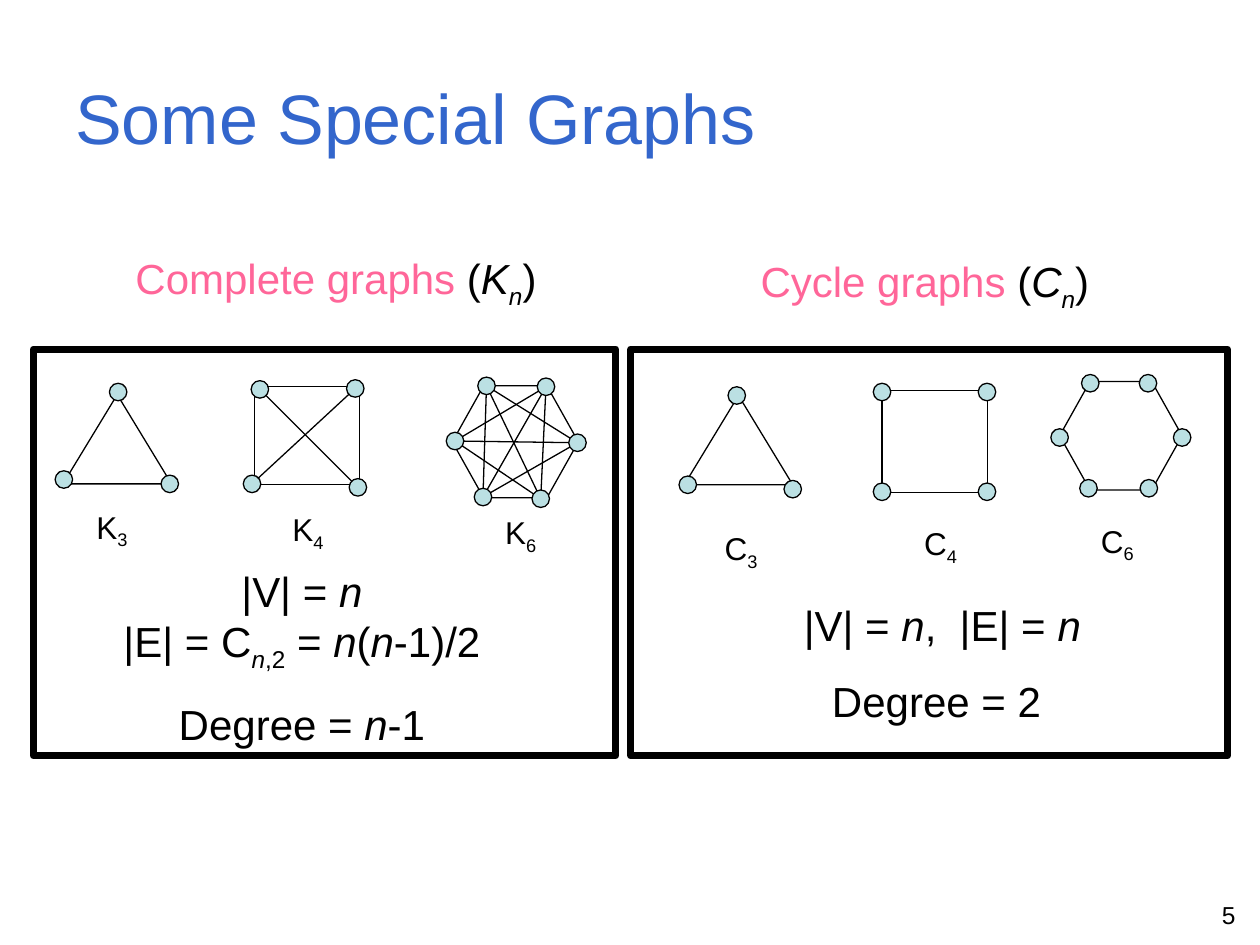
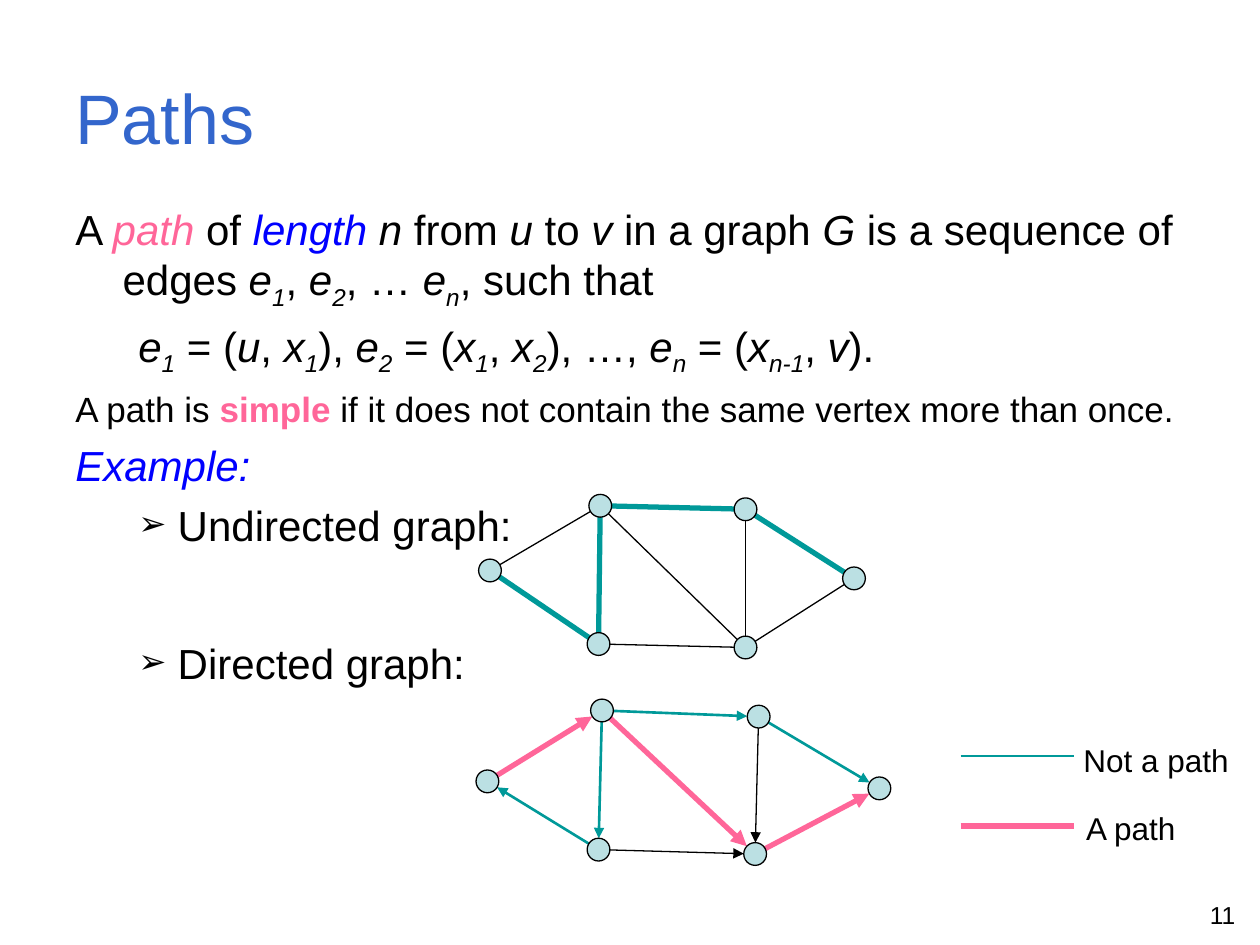
from dataclasses import dataclass
from itertools import combinations
from math import hypot
from typing import NamedTuple

from lxml.etree import SubElement
from pptx import Presentation
from pptx.dml.color import RGBColor
from pptx.enum.shapes import MSO_CONNECTOR, MSO_SHAPE
from pptx.enum.text import MSO_ANCHOR, PP_ALIGN
from pptx.oxml.ns import qn
from pptx.slide import Slide
from pptx.util import Pt

COLORS = {
    "black": "000000",
    "title": "3366CC",
    "pink": "FF6699",
    "blue": "0000FF",
    "teal": "009999",
    "node": "BBE0E3",
}
FONT = "Arial"
THIN, MEDIUM, THICK = 0.75, 1.5, 3

Point = tuple[float, float]
Box = tuple[float, float, float, float]


class Run(NamedTuple):
    text: str
    italic: bool = False
    subscript: bool = False
    color: str = "black"
    bold: bool = False


class Line(NamedTuple):
    runs: list[Run]
    size: float = 24
    align: PP_ALIGN = PP_ALIGN.LEFT
    margin: float = 0
    indent: float = 0
    level: int = 0
    bullet: str = ""
    spacing: float = 1
    before: float = 0


class Edge(NamedTuple):
    start: str
    end: str
    color: str = "black"
    width: float = THIN


@dataclass
class SpecialGraph:
    family: str
    order: str
    label_box: Box
    outline: MSO_SHAPE
    outline_box: Box
    nodes: list[Point]
    inset: float | None = None
    complete: bool = False


@dataclass
class VertexGraph:
    nodes: dict[str, Point]
    edges: list[Edge]
    directed: bool = False


def variable(text: str) -> Run:
    return Run(text, italic=True)


def indexed(name: str, index: str) -> list[Run]:
    return [variable(name), Run(index, italic=True, subscript=True)]


def hanging(runs: list[Run], size: float = 24) -> Line:
    return Line(runs, size, margin=27, indent=-27, before=5.5)


def nested(runs: list[Run], bullet: str = "") -> Line:
    return Line(runs, margin=58.5, indent=-22.5, level=1, bullet=bullet, before=5.5)


def centered(runs: list[Run], spacing: float = 1) -> Line:
    return Line(runs, align=PP_ALIGN.CENTER, spacing=spacing)


def rgb(color: str) -> RGBColor:
    return RGBColor.from_string(COLORS[color])


def add_text(slide: Slide, box: Box, lines: list[Line], wrap: bool = True,
             anchor: MSO_ANCHOR = MSO_ANCHOR.TOP) -> None:
    frame = slide.shapes.add_textbox(*map(Pt, box)).text_frame
    frame.word_wrap = wrap
    frame.vertical_anchor = anchor
    for number, line in enumerate(lines):
        paragraph = frame.add_paragraph() if number else frame.paragraphs[0]
        paragraph.alignment = line.align
        paragraph.level = line.level
        paragraph.line_spacing = line.spacing
        paragraph.space_before = Pt(line.before if number else 0)
        properties = paragraph._p.get_or_add_pPr()
        properties.set("marL", str(Pt(line.margin)))
        properties.set("indent", str(Pt(line.indent)))
        if line.bullet:
            SubElement(properties, qn("a:buSzPct"), val="80000")
            SubElement(properties, qn("a:buFont"), typeface=FONT)
            SubElement(properties, qn("a:buChar"), char=line.bullet)
        for item in line.runs:
            run = paragraph.add_run()
            run.text = item.text
            run.font.name = FONT
            run.font.size = Pt(line.size)
            run.font.italic = item.italic
            run.font.bold = item.bold
            run.font.color.rgb = rgb(item.color)
            if item.subscript:
                run.font._element.set("baseline", "-25000")


def add_outline(slide: Slide, kind: MSO_SHAPE, box: Box, width: float = THIN,
                fill: str | None = None, inset: float | None = None) -> None:
    shape = slide.shapes.add_shape(kind, *map(Pt, box))
    shape.shadow.inherit = False
    if fill:
        shape.fill.solid()
        shape.fill.fore_color.rgb = rgb(fill)
    else:
        shape.fill.background()
    shape.line.color.rgb = rgb("black")
    shape.line.width = Pt(width)
    if inset is not None:
        shape.adjustments[0] = inset


def add_line(slide: Slide, start: Point, end: Point, color: str = "black",
             width: float = THIN, arrow: bool = False) -> None:
    connector = slide.shapes.add_connector(
        MSO_CONNECTOR.STRAIGHT, *map(Pt, (*start, *end)))
    connector.line.color.rgb = rgb(color)
    connector.line.width = Pt(width)
    if arrow:
        SubElement(connector.line._get_or_add_ln(), qn("a:tailEnd"), type="triangle")
    SubElement(connector._element.spPr, qn("a:effectLst"))


def add_node(slide: Slide, center: Point, diameter: float) -> None:
    left, top = (value - diameter / 2 for value in center)
    add_outline(slide, MSO_SHAPE.OVAL, (left, top, diameter, diameter), fill="node")


def toward(start: Point, end: Point, gap: float) -> Point:
    share = 1 - gap / hypot(end[0] - start[0], end[1] - start[1])
    return tuple(a + (b - a) * share for a, b in zip(start, end))


def draw_special_graph(slide: Slide, graph: SpecialGraph) -> None:
    label = [Run(graph.family), Run(graph.order, subscript=True)]
    add_text(slide, graph.label_box, [Line(label, size=18)])
    add_outline(slide, graph.outline, graph.outline_box, inset=graph.inset)
    if graph.complete:
        count = len(graph.nodes)
        for first, second in combinations(range(count), 2):
            if second - first not in (1, count - 1):
                add_line(slide, graph.nodes[first], graph.nodes[second])
    for center in graph.nodes:
        add_node(slide, center, 10)


def draw_vertex_graph(slide: Slide, graph: VertexGraph) -> None:
    diameter = 13
    for edge in graph.edges:
        start, end = graph.nodes[edge.start], graph.nodes[edge.end]
        if graph.directed:
            end = toward(start, end, diameter / 2)
        add_line(slide, start, end, edge.color, edge.width, graph.directed)
    for center in graph.nodes.values():
        add_node(slide, center, diameter)


def add_slide(presentation: Presentation, title: str, number: str) -> Slide:
    slide = presentation.slides.add_slide(presentation.slide_layouts[6])
    add_text(slide, (545, 510.5, 168, 22),
             [Line([Run(number)], size=14, align=PP_ALIGN.RIGHT)])
    add_text(slide, (36, 21.5, 648, 90), [Line([Run(title, color="title")], size=40)],
             anchor=MSO_ANCHOR.MIDDLE)
    return slide


TRIANGLE, SQUARE, HEXAGON = (
    MSO_SHAPE.ISOSCELES_TRIANGLE, MSO_SHAPE.RECTANGLE, MSO_SHAPE.HEXAGON)

SPECIAL_GRAPHS = [
    SpecialGraph("K", "3", (48, 286.5, 34, 29), TRIANGLE, (36, 225.5, 62, 51),
                 [(67.5, 224), (97, 276.5), (36.5, 274)], complete=True),
    SpecialGraph("K", "4", (160, 288, 34, 29), SQUARE, (145.5, 221, 60, 56),
                 [(148.5, 222.5), (203, 222), (204.5, 278.5), (144, 276.5)],
                 complete=True),
    SpecialGraph("K", "6", (281.5, 289.5, 34, 29), HEXAGON, (258.5, 220.5, 72, 64),
                 [(278, 220.5), (312, 221), (330, 253), (309, 285), (276, 284),
                  (260, 252)], inset=0.28, complete=True),
    SpecialGraph("C", "3", (407, 299, 50, 29), TRIANGLE, (391, 226, 62, 51),
                 [(421, 226), (453, 279.5), (393, 277)]),
    SpecialGraph("C", "4", (521, 296, 50, 29), SQUARE, (504, 223, 60.5, 58.5),
                 [(504, 224), (564, 224), (564, 281), (504, 281)]),
    SpecialGraph("C", "6", (622, 294.5, 50, 29), HEXAGON, (605.5, 218, 70, 62),
                 [(623, 219), (656, 219), (675.5, 250), (656.5, 279), (622, 279),
                  (605.5, 250)], inset=0.28),
]

UNDIRECTED = VertexGraph(
    {"top left": (343, 289), "top right": (426, 291), "left": (280, 326),
     "bottom left": (342, 368), "bottom right": (426, 370), "right": (488, 330.5)},
    [Edge("top left", "left"),
     Edge("right", "bottom right"),
     Edge("top left", "bottom right"),
     Edge("bottom left", "bottom right"),
     Edge("top right", "bottom right"),
     Edge("left", "bottom left", "teal", THICK),
     Edge("bottom left", "top left", "teal", THICK),
     Edge("top left", "top right", "teal", THICK),
     Edge("top right", "right", "teal", THICK)])

DIRECTED = VertexGraph(
    {"top left": (344, 406), "top right": (433.5, 409.5), "left": (278.5, 446.5),
     "bottom left": (342, 485.5), "bottom right": (431.5, 488), "right": (502.5, 450.5)},
    [Edge("left", "top left", "pink", THICK),
     Edge("bottom right", "right", "pink", THICK),
     Edge("top left", "bottom right", "pink", THICK),
     Edge("bottom left", "left", "teal", MEDIUM),
     Edge("top right", "right", "teal", MEDIUM),
     Edge("top left", "top right", "teal", MEDIUM),
     Edge("top left", "bottom left", "teal", MEDIUM),
     Edge("bottom left", "bottom right"),
     Edge("top right", "bottom right")],
    directed=True)


def add_special_graphs_slide(presentation: Presentation) -> None:
    slide = add_slide(presentation, "Some Special Graphs", "5")
    headings = [("Complete graphs", "K", (34, 141, 316, 45), PP_ALIGN.CENTER),
                ("Cycle graphs", "C", (427.5, 142.5, 209, 39), PP_ALIGN.LEFT)]
    for name, family, box, align in headings:
        runs = [Run(name, color="pink"), Run(" ("), *indexed(family, "n"), Run(")")]
        add_text(slide, box, [Line(runs, align=align)])
    for graph in SPECIAL_GRAPHS:
        draw_special_graph(slide, graph)
    n = variable("n")
    add_text(slide, (61, 319.5, 223, 109), [
        centered([Run("|V| = "), n]),
        centered([Run("|E| = C"), Run("n", italic=True, subscript=True),
                  Run(",2", subscript=True), Run(" = "), n, Run("("), n, Run("-1)/2")]),
        centered([Run("Degree = "), n, Run("-1")], spacing=1.5)], wrap=False)
    add_text(slide, (451.5, 339, 174, 80), [
        centered([Run("|V| = "), n, Run(",  |E| = "), n]),
        centered([Run("Degree = 2 ")], spacing=1.5)], wrap=False)
    for left, width in ((19, 333), (360.5, 341)):
        add_outline(slide, MSO_SHAPE.RECTANGLE, (left, 199.5, width, 232.5), width=4)


def add_paths_slide(presentation: Presentation) -> None:
    slide = add_slide(presentation, "Paths", "11")
    comma, equals = Run(", "), Run(" = (")
    add_text(slide, (36, 112.5, 648, 187), [
        hanging([Run("A "), Run("path", italic=True, color="pink"), Run(" of "),
                 Run("length ", italic=True, color="blue"), variable("n"),
                 Run(" from "), variable("u"), Run(" to "), variable("v"),
                 Run(" in a graph "), variable("G"), Run(" is a sequence of edges "),
                 *indexed("e", "1"), comma, *indexed("e", "2"), Run(", … "),
                 *indexed("e", "n"), Run(", such that")]),
        nested([*indexed("e", "1"), equals, variable("u"), comma, *indexed("x", "1"),
                Run("), "), *indexed("e", "2"), equals, *indexed("x", "1"), comma,
                *indexed("x", "2"), Run("), …, "), *indexed("e", "n"), equals,
                *indexed("x", "n-1"), comma, variable("v"), Run(").")]),
        hanging([Run("A path is "), Run("simple", color="pink", bold=True),
                 Run(" if it does not contain the same vertex more than once.")], size=20),
        hanging([Run("Example:", italic=True, color="blue")]),
        nested([Run("Undirected graph:")], bullet="➢")])
    add_text(slide, (36, 360.5, 648, 68), [nested([Run("Directed graph:")], bullet="➢")])
    for graph in (UNDIRECTED, DIRECTED):
        draw_vertex_graph(slide, graph)
    legend = [("Not a path", "teal", MEDIUM, 432, (612, 420, 100, 29)),
              ("A path", "pink", THICK, 472, (613.5, 458.5, 98.5, 29))]
    for meaning, color, width, height, box in legend:
        add_line(slide, (549, height), (614, height), color, width)
        add_text(slide, box, [Line([Run(meaning)], size=18)])


def main() -> None:
    presentation = Presentation()
    presentation.slide_width, presentation.slide_height = Pt(720), Pt(540)
    add_special_graphs_slide(presentation)
    add_paths_slide(presentation)
    presentation.save("out.pptx")


if __name__ == "__main__":
    main()
